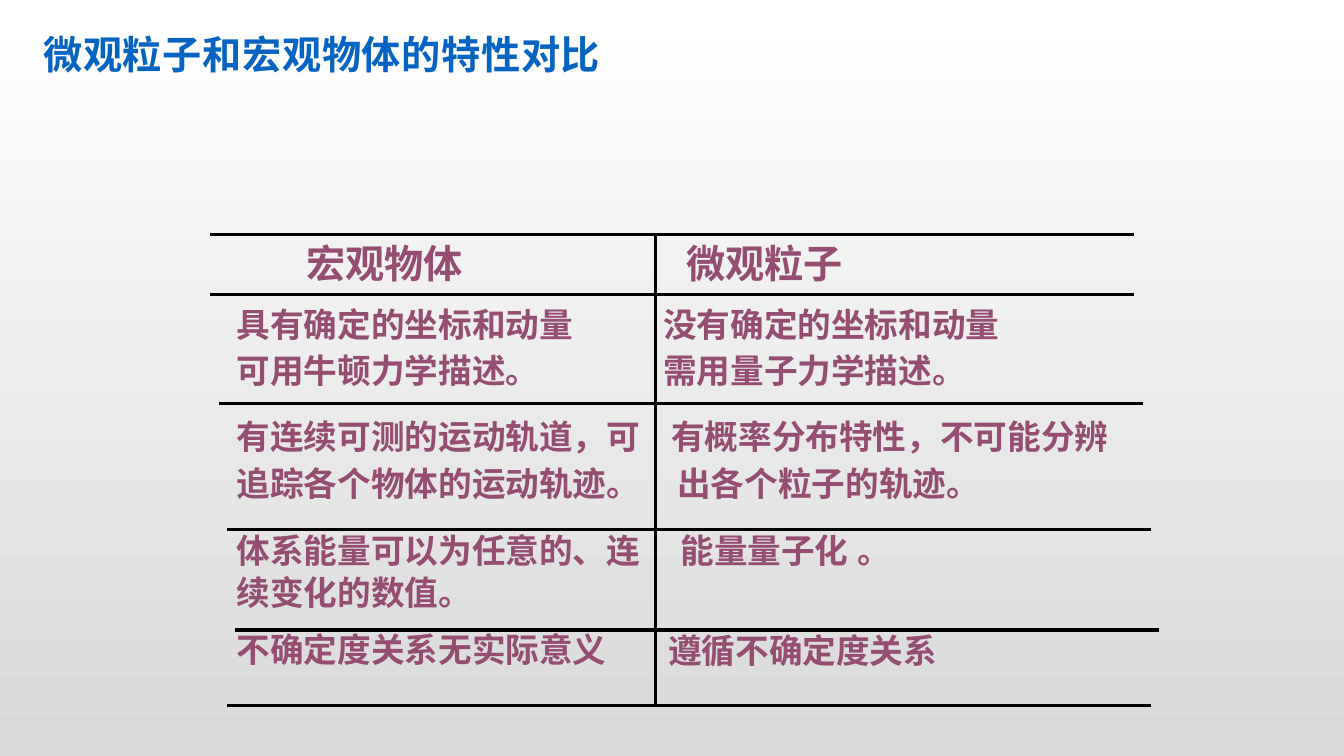
import pptx
import pptx.util
import pptx.dml.color
import pptx.enum.shapes
import pptx.enum.text
import pptx.oxml.ns
import lxml.etree

Inches, Pt = pptx.util.Inches, pptx.util.Pt
qn = pptx.oxml.ns.qn


def rgb(code):
    return pptx.dml.color.RGBColor.from_string(code)


class Page:
    """Style and current slide."""
    blue, plum, black = "0563C1", "954D72", "000000"
    head, body = "Arial", "Cabin"

    def __init__(self, deck):
        self.slide = deck.slides.add_slide(deck.slide_layouts[5])

    def back(self, top, base):
        fill = self.slide.background.fill
        fill.gradient()
        fill.gradient_angle = 270
        for stop, code in zip(fill.gradient_stops, (top, base)):
            stop.color.rgb = rgb(code)

    def run(self, para, text, size, font, color):
        run = para.add_run()
        run.text = text
        run.font.size = Pt(size)
        run.font.name = font
        run.font.bold = True
        run.font.color.rgb = rgb(color)
        return run

    def title(self, text, x, y, w, h):
        shape = self.slide.shapes.title
        shape.left, shape.top = Inches(x), Inches(y)
        shape.width, shape.height = Inches(w), Inches(h)
        frame = shape.text_frame
        frame.auto_size = pptx.enum.text.MSO_AUTO_SIZE.NONE
        frame.vertical_anchor = pptx.enum.text.MSO_ANCHOR.TOP
        frame.margin_top = Inches(0.15)
        para = frame.paragraphs[0]
        para.alignment = pptx.enum.text.PP_ALIGN.LEFT
        run = self.run(para, text, 28, self.head, self.blue)
        run.font._element.set("spc", "50")

    def column(self, rows, x, y, w, h):
        box = self.slide.shapes.add_textbox(Inches(x), Inches(y), Inches(w), Inches(h))
        frame = box.text_frame
        frame.word_wrap = True
        for i, (indent, gap, runs) in enumerate(rows):
            para = frame.paragraphs[0] if i == 0 else frame.add_paragraph()
            prop = para._p.get_or_add_pPr()
            prop.set("marL", str(Inches(indent)))
            prop.set("indent", "0")
            para.space_before = Pt(gap)
            for text, size in runs:
                self.run(para, text, size, self.body, self.plum)

    def line(self, x1, y1, x2, y2):
        line = self.slide.shapes.add_connector(
            pptx.enum.shapes.MSO_CONNECTOR.STRAIGHT,
            Inches(x1), Inches(y1), Inches(x2), Inches(y2))
        line.line.color.rgb = rgb(self.black)
        line.line.width = Pt(2.25)
        lxml.etree.SubElement(line._element.spPr, qn("a:effectLst"))


def main():
    deck = pptx.Presentation()
    deck.slide_width, deck.slide_height = Inches(13.33), Inches(7.5)
    page = Page(deck)
    page.back("FFFFFF", "D9D9D9")
    top, base, wide = 2.33, 7, 9.17
    tall = (" ", 28)  # gives a row the height of the larger size

    # Left column: indent, space before, runs
    page.column([
        (0.69, 0, [("宏观物体", 28)]),
        (0, 12, [("具有确定的坐标和动量", 24)]),
        (0, 0, [("可用牛顿力学描述。", 24), tall]),
        (0, 14, [("有连续可测的运动轨道，可", 24), tall]),
        (0, 0, [("追踪各个物体的运动轨迹。", 24), tall]),
        (0, 14, [("体系能量可以为任意的、连", 24), tall]),
        (0, 0, [("续变化的数值。", 24)]),
        (0, 12, [("不确定度关系无实际意义", 24)]),
    ], 2.25, top, 4.25, 4.54)

    # Right column
    page.column([
        (0.23, 0, [("微观粒子", 28)]),
        (0, 12, [("没有确定的坐标和动量", 24)]),
        (0, 0, [("需用量子力学描述。", 24), tall]),
        (0.08, 14, [("有概率分布特性，不可能分辨", 24), tall]),
        (0.14, 0, [("出各个粒子的轨迹。", 24), tall]),
        (0.17, 14, [("能量量子化", 24), tall, ("。", 24)]),
        (0.05, 42, [("遵循不确定度关系", 24)]),
    ], 6.48, top, 4.85, 4.54)

    # Table rules
    for x, y in [(2.08, top), (2.08, 2.92), (2.17, 4), (2.25, 5.25), (2.33, 6.25), (2.25, base)]:
        page.line(x, y, x + wide, y)
    page.line(6.5, top, 6.5, base)

    # Title
    page.title("微观粒子和宏观物体的特性对比", 0.33, 0.15, 8.52, 1.25)
    deck.save("out.pptx")


if __name__ == "__main__":
    main()
